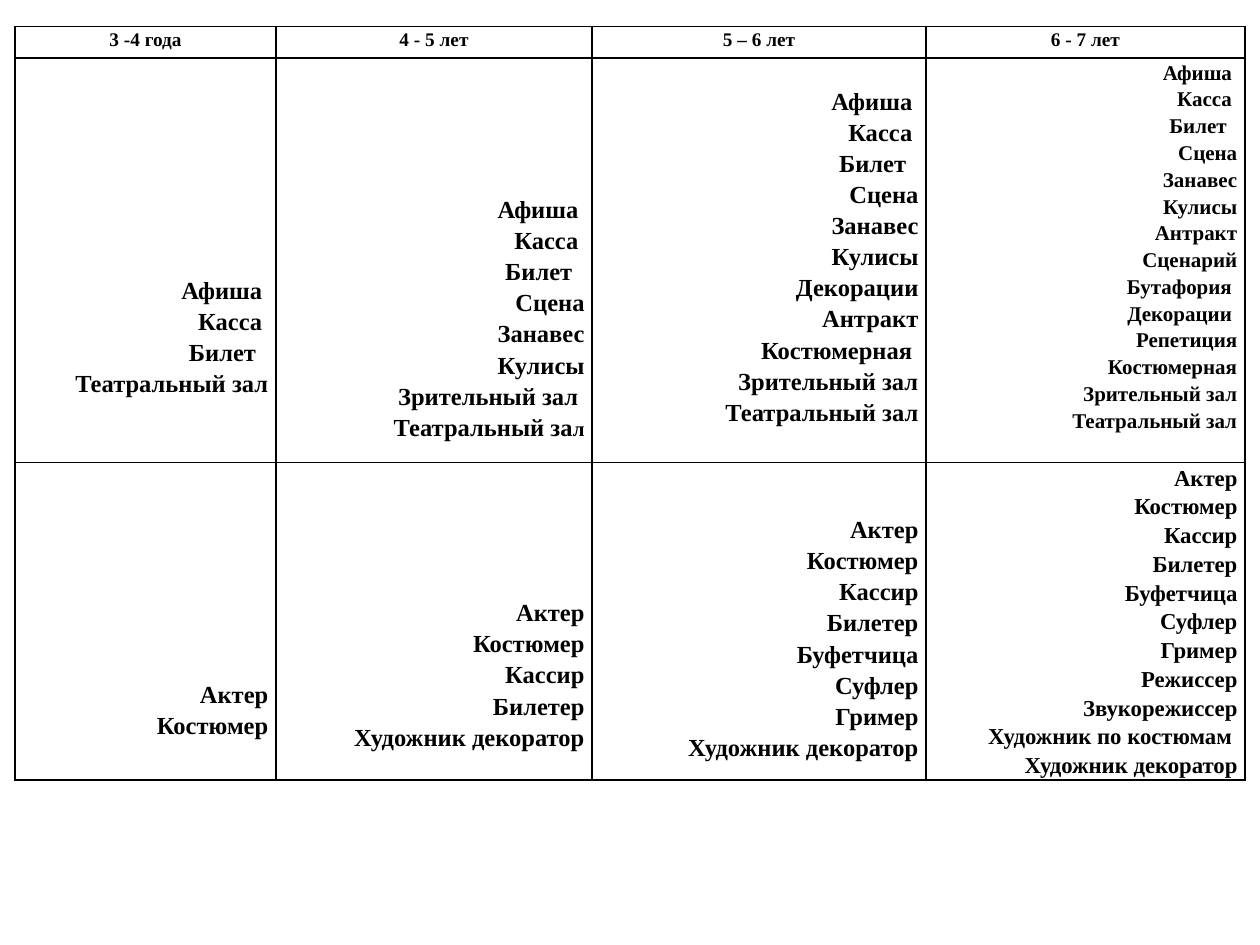
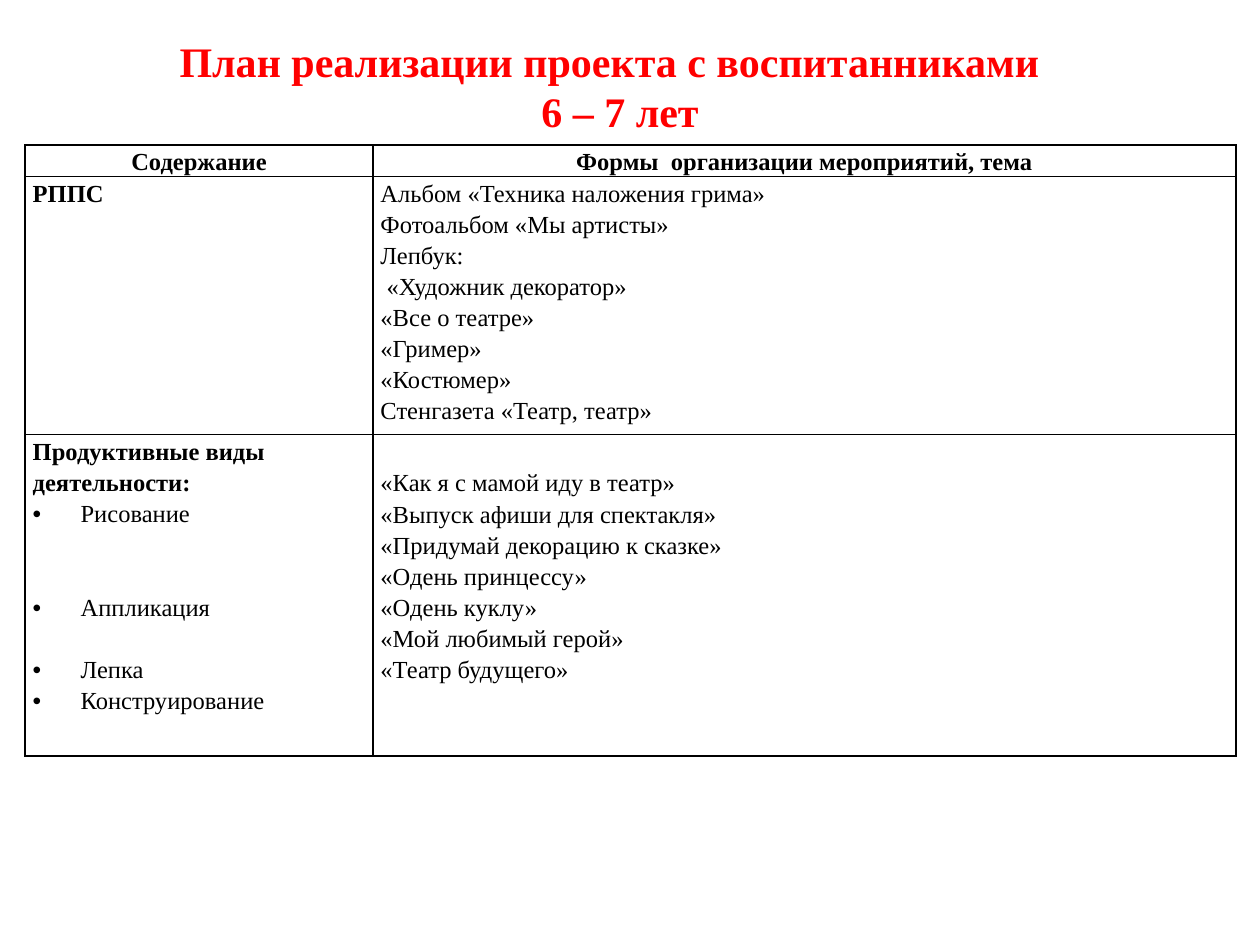
from lxml import etree
from pptx import Presentation
from pptx.dml.color import RGBColor
from pptx.enum import text
from pptx.oxml.ns import qn
from pptx.util import Inches, Pt

FONT, INK, RED = "Times New Roman", "000000", "FF0000"
LEFT, MID, RIGHT = text.PP_ALIGN.LEFT, text.PP_ALIGN.CENTER, text.PP_ALIGN.RIGHT
LINE = 17.8

AGES = ["3 -4 года", "4 - 5 лет", "5 – 6 лет", "6 - 7 лет"]
START = ["Афиша ", "Касса ", "Билет  "]
STAGE = START + ["Сцена", "Занавес", "Кулисы"]
HALL = "Театральный зал"
CREW = ["Актер", "Костюмер", "Кассир", "Билетер"]
TEAM = CREW + ["Буфетчица", "Суфлер", "Гример"]
DECOR = "Художник декоратор"
# size, top inset, words
WORDS = [
    (14, 1.71, START + [HALL]),
    (14, 1.07, STAGE + ["Зрительный зал ", "Театральный за|л"]),
    (14, 0.21, STAGE + ["Декорации", "Антракт", "Костюмерная ",
                        "Зрительный зал", HALL]),
    (12, 0, STAGE + ["Антракт", "Сценарий", "Бутафория ", "Декорации ",
                     "Репетиция", "Костюмерная", "Зрительный зал", HALL]),
]
JOBS = [
    (14, 1.71, CREW[:2]),
    (14, 1.06, CREW + [DECOR]),
    (14, 0.4, TEAM + [DECOR]),
    (13, 0, TEAM + ["Режиссер", "Звукорежиссер", "Художник по костюмам ", DECOR]),
]

TITLE = "План реализации проекта с воспитанниками  \v6 – 7 лет"
HEADS = ["Содержание", "Формы  организации мероприятий, тема"]
SPACE = "РППС"
ITEMS = ["Альбом «Техника наложения грима»", "Фотоальбом «Мы артисты»", "Лепбук:",
         " «Художник декоратор»", "«Все о театре»", "«Гример»", "«Костюмер»",
         "Стенгазета «Театр, театр»"]
CRAFT = "Продуктивные виды деятельности:"
KINDS = [("Рисование", 0), ("Аппликация", 2), ("Лепка", 1), ("Конструирование", 0)]
THEMES = ["«Как я с мамой иду в театр»", "«Выпуск афиши для спектакля»",
          "«Придумай декорацию к сказке»", "«Одень принцессу»", "«Одень куклу»",
          "«Мой любимый герой»", "«Театр будущего»"]


def tint(code):
    return RGBColor.from_string(code)


def write(para, words, size=14, bold=True, color=INK, align=LEFT,
          pitch=1.15, gap=0, dot=False):
    para.alignment, para.line_spacing = align, pitch
    if gap:
        para.space_before = Pt(gap)
    if dot:
        props = para._p.get_or_add_pPr()
        props.set("marL", str(Inches(0.38)))
        props.set("indent", str(-Inches(0.38)))
        etree.SubElement(props, qn("a:buFont"), typeface="Arial")
        etree.SubElement(props, qn("a:buChar"), char="•")
    para.text = words
    for run in para.runs:
        font = run.font
        font.name, font.size, font.bold = FONT, Pt(size), bold
        font.color.rgb = tint(color)


def fill(cell, lines, top=0, **form):
    cell.margin_top = Inches(top)
    frame = cell.text_frame
    for i, line in enumerate(lines):
        para = frame.paragraphs[0] if i == 0 else frame.add_paragraph()
        main, _, tail = line.partition("|")
        write(para, main, **form)
        if tail:
            run = para.add_run()
            run.text = tail
            font = run.font
            font.name, font.size, font.bold = FONT, Pt(12), True
            font.color.rgb = tint(INK)


def frame_cell(cell):
    cell.margin_left = cell.margin_right = Inches(0.06)
    cell.margin_top = cell.margin_bottom = 0
    cell.fill.background()
    props = cell._tc.get_or_add_tcPr()
    for i, side in enumerate("LRTB"):
        line = etree.Element(qn("a:ln" + side), w=str(Pt(1)))
        paint = etree.SubElement(line, qn("a:solidFill"))
        etree.SubElement(paint, qn("a:srgbClr"), val=INK)
        props.insert(i, line)


def grid(slide, left, top, cols, rows):
    table = slide.shapes.add_table(
        len(rows), len(cols), Inches(left), Inches(top),
        Inches(sum(cols)), Inches(sum(rows))).table
    table.first_row = table.horz_banding = False
    for col, wide in zip(table.columns, cols):
        col.width = Inches(wide)
    for row, high in zip(table.rows, rows):
        row.height = Inches(high)
    for cell in table.iter_cells():
        frame_cell(cell)
    return table


def terms(deck):
    slide = deck.slides.add_slide(deck.slide_layouts[6])
    table = grid(slide, 0.12, 0.21, [2.07, 2.51, 2.65, 2.53], [0.25, 3.21, 2.52])
    for c, age in enumerate(AGES):
        fill(table.cell(0, c), [age], size=11, align=MID)
        for r, block in enumerate((WORDS, JOBS), 1):
            size, top, lines = block[c]
            fill(table.cell(r, c), lines, top, size=size, align=RIGHT)


def plan(deck):
    slide = deck.slides.add_slide(deck.slide_layouts[5])
    title = slide.shapes.title
    title.left, title.top = Inches(0.67), Inches(0.13)
    title.width, title.height = Inches(8.5), Inches(1.1)
    title.text_frame.vertical_anchor = text.MSO_ANCHOR.MIDDLE
    write(title.text_frame.paragraphs[0], TITLE, size=24, color=RED,
          align=MID, pitch=1.0)
    table = grid(slide, 0.2, 1.15, [2.76, 6.85], [0.25, 2.05, 2.55])
    for c, head in enumerate(HEADS):
        fill(table.cell(0, c), [head], align=MID)
    fill(table.cell(1, 0), [SPACE])
    fill(table.cell(1, 1), ITEMS, bold=False)
    kinds = table.cell(2, 0)
    fill(kinds, [CRAFT])
    for kind, skip in KINDS:
        write(kinds.text_frame.add_paragraph(), kind, bold=False,
              gap=skip * LINE, dot=True)
    fill(table.cell(2, 1), THEMES, top=0.25, bold=False)


def main():
    deck = Presentation()
    deck.slide_width, deck.slide_height = Inches(10), Inches(7.5)
    terms(deck)
    plan(deck)
    deck.save("out.pptx")


if __name__ == "__main__":
    main()
